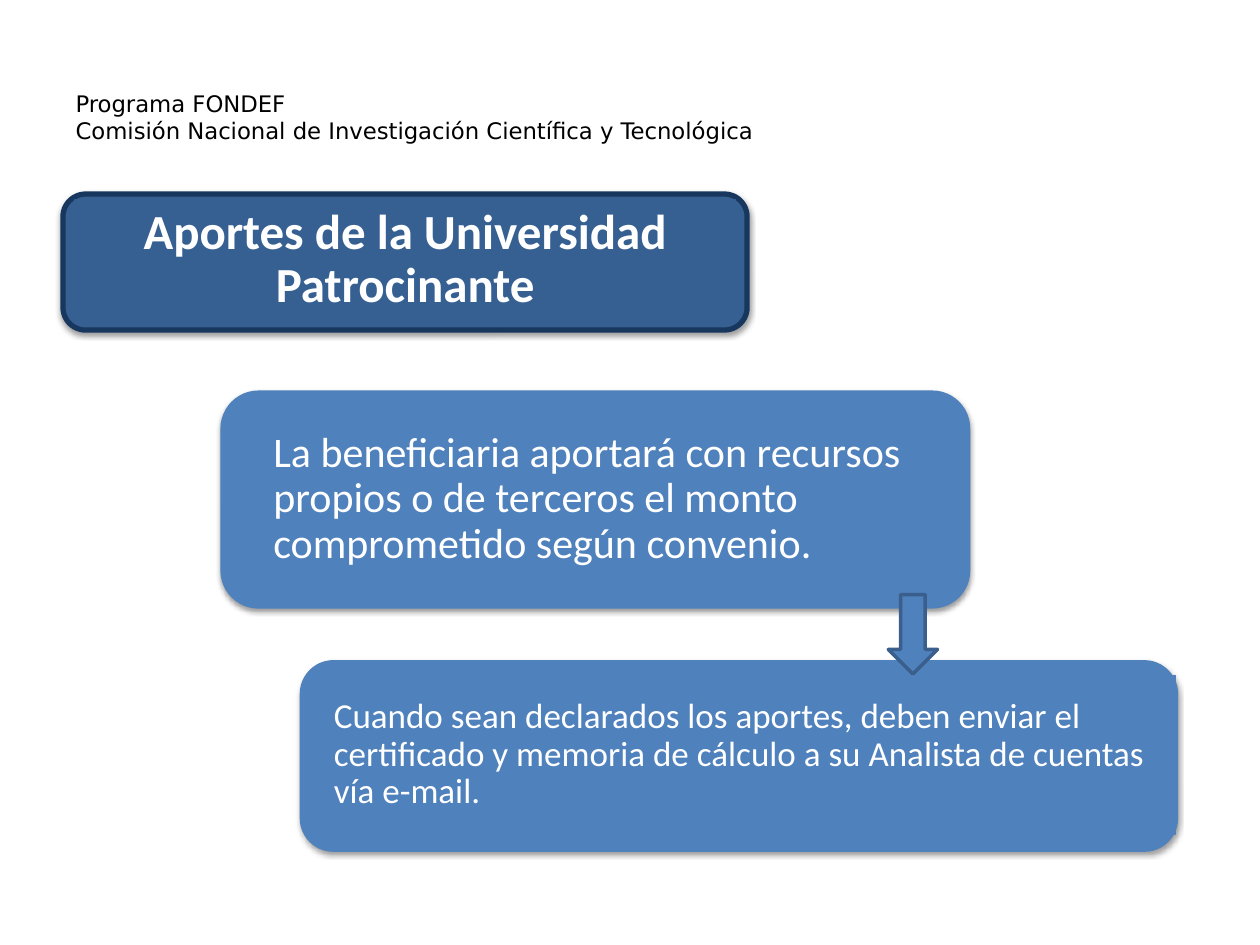
"""Build the slide on the contributions of the sponsoring university."""
import pptx
import pptx.dml.color
import pptx.enum.shapes
import pptx.enum.text
import pptx.oxml
import pptx.oxml.ns
import pptx.util

RGB = pptx.dml.color.RGBColor
Pt = pptx.util.Pt
SHAPE = pptx.enum.shapes.MSO_SHAPE
ALIGN = pptx.enum.text.PP_ALIGN
MIDDLE = pptx.enum.text.MSO_ANCHOR.MIDDLE

BLACK = RGB(0x00, 0x00, 0x00)
WHITE = RGB(0xFF, 0xFF, 0xFF)
BLUE = RGB(0x4F, 0x81, 0xBD)
DEEP_BLUE = RGB(0x37, 0x60, 0x92)
NAVY = RGB(0x17, 0x37, 0x5E)
ARROW_EDGE = RGB(0x3A, 0x5F, 0x8C)

SLIDE_WIDTH, SLIDE_HEIGHT = pptx.util.Inches(10), pptx.util.Inches(7.5)
INSET = pptx.util.Inches(0.08)

HEADING = "Programa FONDEF\vComisión Nacional de Investigación Científica y Tecnológica"
HEADING_AREA = (5, 4, 78.1, 16.67)
ARROW_AREA = (70.5, 62.93, 3.9, 8.4)
CARDS = [
    dict(text="Aportes de la Universidad Patrocinante",
         card=(5, 20.53, 54.3, 14.4), label=(5.9, 21.07, 52.5, 12.93),
         fill=DEEP_BLUE, edge=NAVY, label_edge=None,
         size=28, bold=True, align=ALIGN.CENTER),
    dict(text="La beneficiaria aportará con recursos propios o de terceros "
              "el monto comprometido según convenio.",
         card=(17.7, 41.6, 59.1, 22.53), label=(20.9, 42.67, 55, 20.27),
         fill=BLUE, edge=BLUE, label_edge=BLUE,
         size=24, bold=False, align=ALIGN.LEFT),
    dict(text="Cuando sean declarados los aportes, deben enviar el certificado "
              "y memoria de cálculo a su Analista de cuentas vía e-mail.",
         card=(24, 70.13, 69.3, 19.73), label=(25.7, 71.47, 67.6, 16.8),
         fill=BLUE, edge=BLUE, label_edge=BLUE,
         size=20, bold=False, align=ALIGN.LEFT),
]
SHADOW = (
    f'<a:effectLst {pptx.oxml.ns.nsdecls("a")}>'
    f'<a:outerShdw blurRad="{Pt(3.1)}" dist="{Pt(1.6)}" dir="5400000" rotWithShape="0">'
    '<a:srgbClr val="000000"><a:alpha val="38000"/></a:srgbClr>'
    '</a:outerShdw></a:effectLst>'
)


def to_slide(area):
    """Turn percentages of the slide into lengths."""
    sides = (SLIDE_WIDTH, SLIDE_HEIGHT) * 2
    return [round(share * side / 100) for share, side in zip(area, sides)]


def add_block(shapes, kind, area, fill, edge, edge_width):
    """Add a filled shape with an optional outline and no shadow."""
    block = shapes.add_shape(kind, *to_slide(area))
    block.shadow.inherit = False
    block.fill.solid()
    block.fill.fore_color.rgb = fill
    if edge is None:
        block.line.fill.background()
    else:
        block.line.color.rgb = edge
        block.line.width = Pt(edge_width)
    return block


def set_font(paragraph, name, size, color, bold=False):
    """Format all the text of a paragraph."""
    font = paragraph.font
    font.name, font.size, font.bold = name, Pt(size), bold
    font.color.rgb = color


def add_card(slide, content):
    """Add a rounded, shadowed card grouped with its label."""
    shapes = slide.shapes.add_group_shape().shapes
    card = add_block(shapes, SHAPE.ROUNDED_RECTANGLE, content["card"],
                     content["fill"], content["edge"], 3)
    card.shadow.inherit = True
    card.element.spPr.append(pptx.oxml.parse_xml(SHADOW))

    label = add_block(shapes, SHAPE.RECTANGLE, content["label"],
                      content["fill"], content["label_edge"], 0.75)
    frame = label.text_frame
    frame.word_wrap = True
    frame.vertical_anchor = MIDDLE
    frame.margin_left = frame.margin_right = INSET
    frame.margin_top = frame.margin_bottom = INSET
    paragraph = frame.paragraphs[0]
    paragraph.text = content["text"]
    paragraph.alignment = content["align"]
    paragraph.line_spacing = 0.9
    set_font(paragraph, "Calibri", content["size"], WHITE, content["bold"])


def main():
    """Assemble and save the slide."""
    deck = pptx.Presentation()
    deck.slide_width, deck.slide_height = SLIDE_WIDTH, SLIDE_HEIGHT
    slide = deck.slides.add_slide(deck.slide_layouts.get_by_name("Title Only"))

    heading = slide.shapes.title
    heading.left, heading.top, heading.width, heading.height = to_slide(HEADING_AREA)
    heading.text_frame.vertical_anchor = MIDDLE
    paragraph = heading.text_frame.paragraphs[0]
    paragraph.text = HEADING
    paragraph.alignment = ALIGN.LEFT
    set_font(paragraph, "DejaVu Sans", 13, BLACK)

    for content in CARDS:
        add_card(slide, content)
    add_block(slide.shapes, SHAPE.DOWN_ARROW, ARROW_AREA, BLUE, ARROW_EDGE, 2)
    deck.save("out.pptx")


if __name__ == "__main__":
    main()
